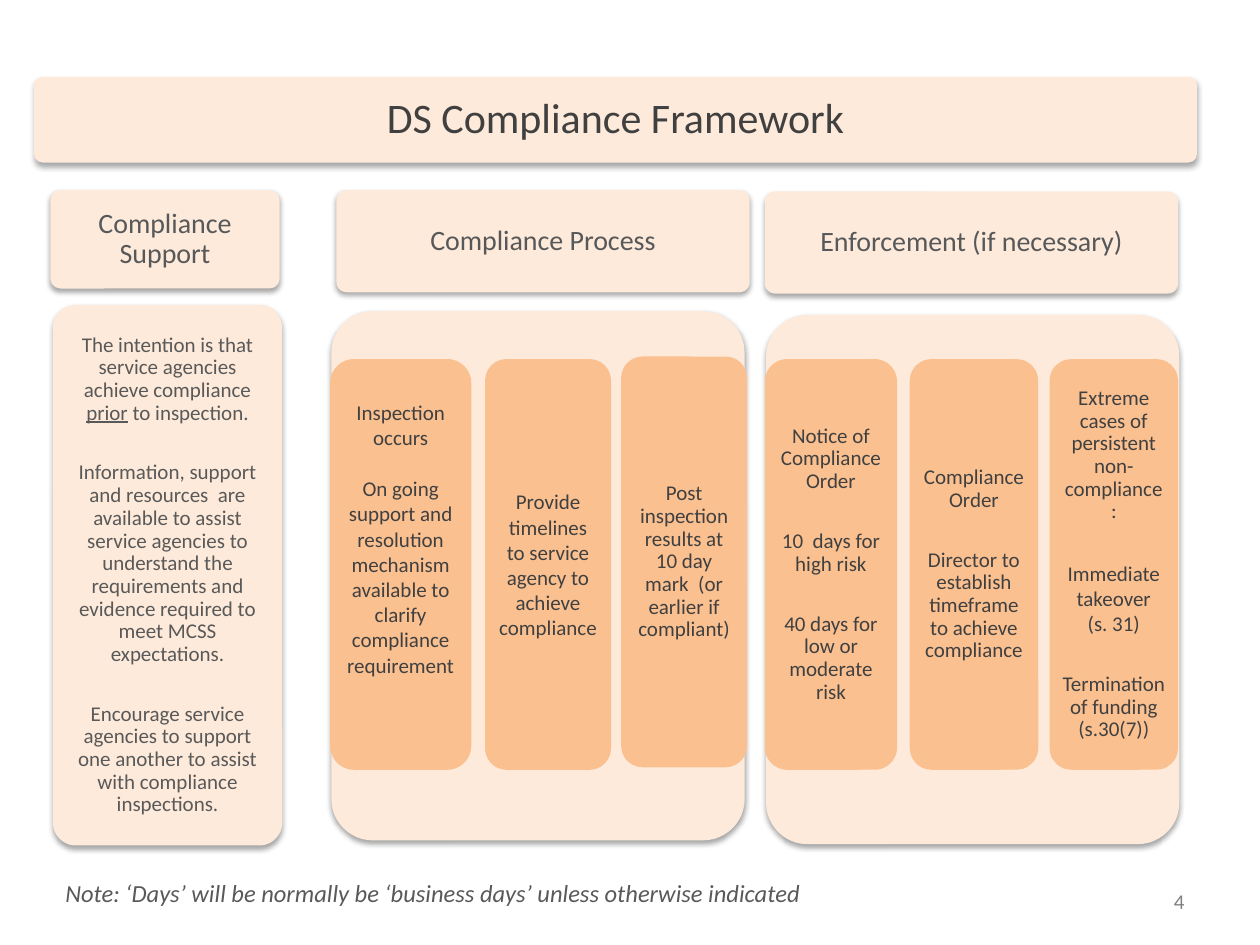
from dataclasses import dataclass

from lxml import etree
from pptx import Presentation
from pptx import util as u
from pptx.dml.color import RGBColor
from pptx.enum import shapes, text
from pptx.oxml import ns

FONT = "Calibri"
PALE, ORANGE = "FDEADA", "FAC090"
DARK, GREY, SLATE, LIGHT = "404040", "595959", "57585A", "808080"
GAP = 21.3  # points between the paragraphs of a card


@dataclass
class Run:
    text: str
    underline: bool = False


@dataclass
class Para:
    runs: list[Run]
    after: float = 0
    spacing: float = 0.9


@dataclass
class Card:
    left: float
    top: float
    width: float
    height: float
    paras: list[Para]
    size: int = 12
    color: str = DARK
    fill: str = PALE
    radius: float = 0.1
    inset: float = 0.07
    bottom: float | None = None
    shadow: bool = True


def rgb(value: str) -> RGBColor:
    return RGBColor.from_string(value)


def paras(*texts: str, after: float = GAP, spacing: float = 0.9) -> list[Para]:
    """Plain paragraphs with equal gaps between them."""
    last = len(texts) - 1
    return [Para([Run(t)], after if i < last else 0, spacing)
            for i, t in enumerate(texts)]


def step(left: float, width: float, content: list[Para],
         top: float = 2.85, bottom: float | None = None) -> Card:
    return Card(left, top, width, 3.26, content, fill=ORANGE, radius=0.17,
                inset=0.05, bottom=bottom, shadow=False)


def add_run(p, content: str, size: int, color: str):
    r = p.add_run()
    r.text = content
    r.font.name, r.font.size = FONT, u.Pt(size)
    r.font.color.rgb = rgb(color)
    return r


def add_shadow(sp) -> None:
    effects = sp._element.spPr.find(ns.qn("a:effectLst"))
    outer = etree.SubElement(effects, ns.qn("a:outerShdw"), blurRad=str(u.Pt(3.1)),
                             dist=str(u.Pt(1.8)), dir="5400000", rotWithShape="0")
    black = etree.SubElement(outer, ns.qn("a:srgbClr"), val="000000")
    etree.SubElement(black, ns.qn("a:alpha"), val="35000")


def add_card(s, card: Card) -> None:
    box = [u.Inches(v) for v in (card.left, card.top, card.width, card.height)]
    sp = s.shapes.add_shape(shapes.MSO_SHAPE.ROUNDED_RECTANGLE, *box)
    sp.adjustments[0] = card.radius
    sp.fill.solid()
    sp.fill.fore_color.rgb = rgb(card.fill)
    sp.line.fill.background()
    sp.shadow.inherit = False
    if card.shadow:
        add_shadow(sp)

    tf = sp.text_frame
    tf.word_wrap = True
    tf.vertical_anchor = text.MSO_ANCHOR.MIDDLE
    tf.margin_left = tf.margin_right = tf.margin_top = u.Inches(card.inset)
    tf.margin_bottom = u.Inches(card.inset if card.bottom is None else card.bottom)
    for i, para in enumerate(card.paras):
        p = tf.add_paragraph() if i else tf.paragraphs[0]
        p.alignment = text.PP_ALIGN.CENTER
        p.line_spacing = para.spacing
        p.space_after = u.Pt(para.after)
        for run in para.runs:
            for n, line in enumerate(run.text.split("\n")):
                if n:
                    p.add_line_break()
                r = add_run(p, line, card.size, card.color)
                if run.underline:
                    r.font.underline = True


def add_label(s, left: float, top: float, width: float, height: float,
              content: str, size: int, color: str):
    box = [u.Inches(v) for v in (left, top, width, height)]
    tf = s.shapes.add_textbox(*box).text_frame
    p = tf.paragraphs[0]
    return tf, p, add_run(p, content, size, color)


# Title and column headings
HEADINGS = [
    Card(0.27, 0.61, 9.23, 0.68, paras("DS Compliance Framework"), 24, inset=0.1),
    Card(0.4, 1.51, 1.82, 0.78, paras("Compliance Support"), 16, SLATE),
    Card(2.67, 1.51, 3.28, 0.81, paras("Compliance Process"), 16, SLATE),
    Card(6.07, 1.52, 3.28, 0.81, paras("Enforcement (if necessary)"), 16, SLATE),
]

# Column panels
SUPPORT = [
    Para([Run("The intention is that service agencies achieve compliance "),
          Run("prior", underline=True), Run(" to inspection.")], GAP),
    *paras("Information, support and resources  are available to assist service "
           "agencies to understand the requirements and evidence required to meet "
           "MCSS expectations.",
           "Encourage service agencies to support one another to assist with "
           "compliance inspections."),
]
PANELS = [
    Card(0.42, 2.42, 1.82, 4.29, SUPPORT, color=GREY, inset=0.05),
    Card(2.63, 2.47, 3.28, 4.2, []),
    Card(6.08, 2.5, 3.28, 4.2, []),
]

# Steps inside the process and enforcement panels
STEPS = [
    step(2.62, 1.12, paras("Inspection occurs",
                           "On going support and resolution mechanism available "
                           "to clarify compliance requirement",
                           after=14.6, spacing=1), bottom=0.46),
    step(3.85, 1, paras("Provide timelines to service agency to achieve compliance",
                        spacing=1)),
    step(4.93, 1, paras("Post inspection results at 10 day mark  "
                        "(or earlier if compliant)"), top=2.83),
    step(6.07, 1.05, paras("Notice of Compliance Order", "10  days for high risk",
                           "40 days for low or moderate risk")),
    step(7.22, 1.02, paras("Compliance Order",
                           "Director to establish timeframe to achieve compliance")),
    step(8.33, 1.02, [
        Para([Run("Extreme cases of persistent non-compliance:")], GAP),
        Para([Run("Immediate takeover\n(s. 31)")], GAP, 1),
        Para([Run("Termination of funding (s.30(7))")]),
    ]),
]


def main() -> None:
    prs = Presentation()
    prs.slide_width, prs.slide_height = u.Inches(10), u.Inches(7.5)
    s = prs.slides.add_slide(prs.slide_layouts[6])

    for card in HEADINGS + PANELS + STEPS:
        add_card(s, card)

    # Page number and footnote
    tf, p, _ = add_label(s, 7.17, 6.95, 2.33, 0.4, "4", 12, LIGHT)
    tf.word_wrap = True
    tf.vertical_anchor = text.MSO_ANCHOR.MIDDLE
    p.alignment = text.PP_ALIGN.RIGHT

    tf, _, r = add_label(s, 0.42, 6.92, 6.13, 0.34,
                         "Note: ‘Days’ will be normally be ‘business days’ "
                         "unless otherwise indicated", 14, GREY)
    tf.word_wrap = False
    tf.auto_size = text.MSO_AUTO_SIZE.SHAPE_TO_FIT_TEXT
    r.font.italic = True

    prs.save("out.pptx")


if __name__ == "__main__":
    main()
